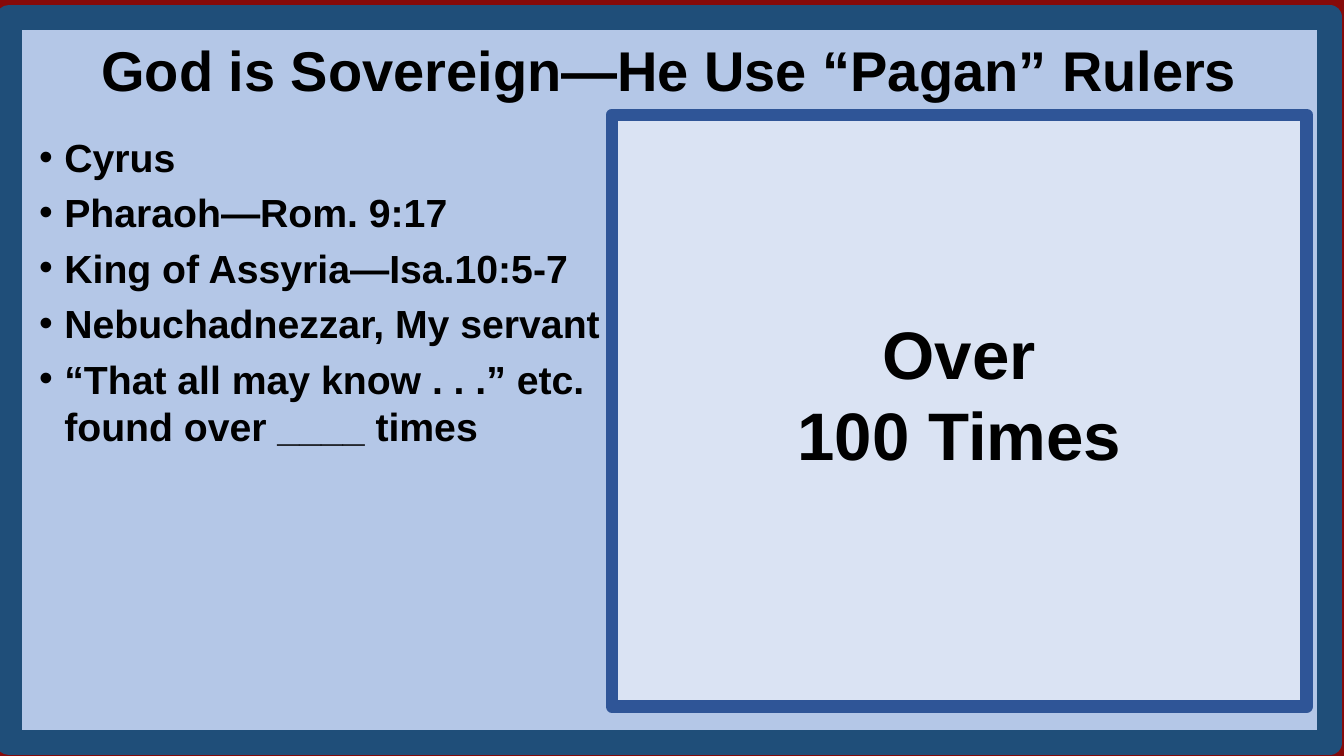
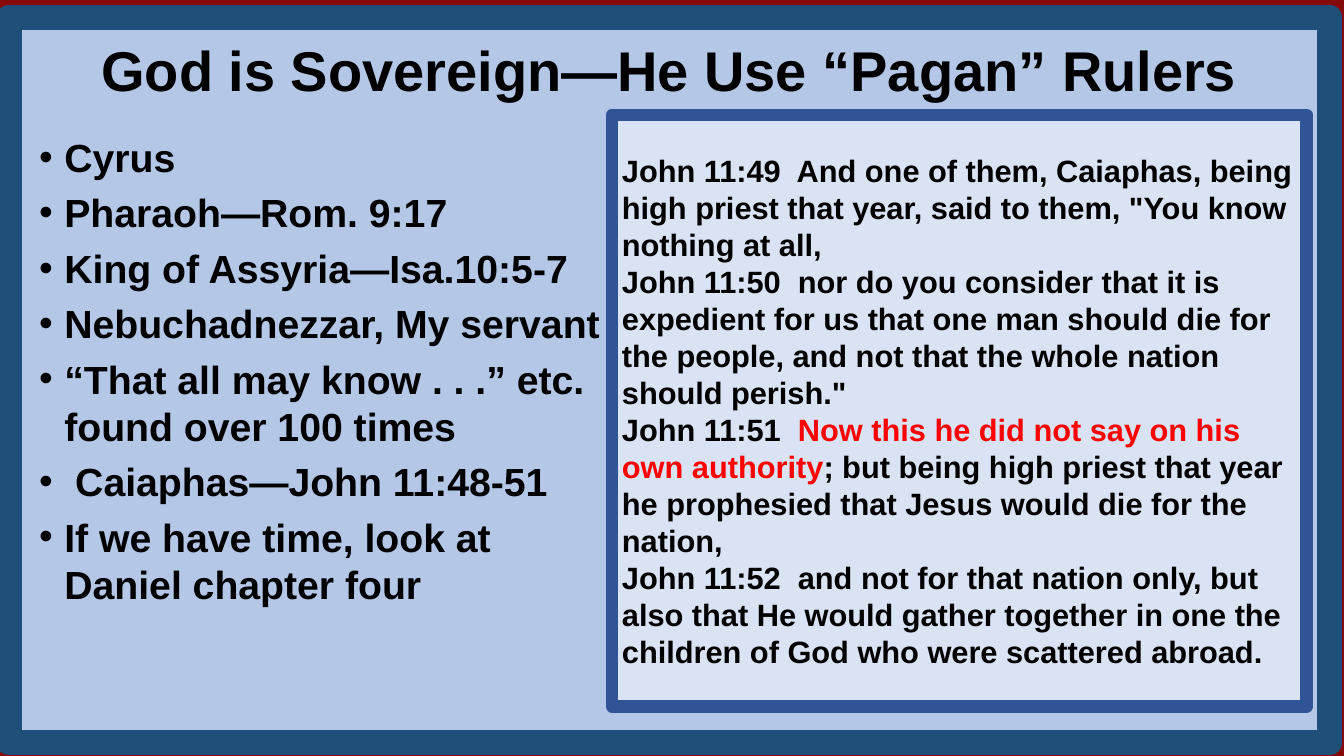
from dataclasses import dataclass

from lxml import etree
from pptx import Presentation
from pptx.dml.color import RGBColor
from pptx.enum.shapes import MSO_SHAPE
from pptx.enum.text import MSO_ANCHOR, MSO_AUTO_SIZE, PP_ALIGN
from pptx.oxml.ns import qn
from pptx.util import Emu, Pt

EMU_PER_PX = 9144  # 100 px to the inch
RECTANGLE = MSO_SHAPE.RECTANGLE
TOP, MIDDLE = MSO_ANCHOR.TOP, MSO_ANCHOR.MIDDLE
LEFT, CENTER = PP_ALIGN.LEFT, PP_ALIGN.CENTER
NO_AUTOFIT = MSO_AUTO_SIZE.NONE
TITLE_ONLY = 5


@dataclass(frozen=True)
class Theme:
    font: str = "Arial"
    backdrop: str = "860A0A"
    frame_fill: str = "B4C7E7"
    frame_line: str = "1F4E79"
    panel_fill: str = "DAE3F3"
    panel_line: str = "2F5597"
    ink: str = "000000"
    accent: str = "FF0000"
    title_size: int = 40
    bullet_size: int = 28
    callout_size: int = 48
    verse_size: int = 22


def px(length):
    return Emu(length * EMU_PER_PX)


class SlideBuilder:
    """Holds the style and the slide being built."""

    def __init__(self, deck, theme):
        self.deck = deck
        self.theme = theme
        self.page = None
        deck.slide_width, deck.slide_height = px(1333), px(750)
        fill = deck.slide_master.background.fill
        fill.solid()
        fill.fore_color.rgb = RGBColor.from_string(theme.backdrop)

    def start(self, title):
        """Add a page with its framed background and title."""
        self.page = self.deck.slides.add_slide(self.deck.slide_layouts[TITLE_ONLY])
        self.rectangle((9, 17, 1310, 720), self.theme.frame_fill,
                       self.theme.frame_line, 18)
        box = self.page.shapes.title
        box.left, box.top, box.width, box.height = map(px, (26, 30, 1275, 77))
        self.page.shapes._spTree.append(box._element)  # above the frame
        frame = box.text_frame
        frame.auto_size = NO_AUTOFIT
        frame.vertical_anchor = TOP
        self.add_paragraphs(frame, [title], self.theme.title_size, CENTER)

    def rectangle(self, place, fill, line, line_width):
        box = self.page.shapes.add_shape(RECTANGLE, *map(px, place))
        box.shadow.inherit = False
        box.fill.solid()
        box.fill.fore_color.rgb = RGBColor.from_string(fill)
        box.line.color.rgb = RGBColor.from_string(line)
        box.line.width = Pt(line_width)
        return box

    def panel(self, paragraphs, size, align, bottom_margin=5):
        """Add the outlined panel on the right."""
        box = self.rectangle((607, 114, 689, 587), self.theme.panel_fill,
                             self.theme.panel_line, 9)
        frame = box.text_frame
        frame.word_wrap = True
        frame.vertical_anchor = MIDDLE
        frame.margin_bottom = px(bottom_margin)
        self.add_paragraphs(frame, paragraphs, size, align)

    def bullets(self, items, height):
        """Add the bulleted list on the left."""
        box = self.page.shapes.add_textbox(*map(px, (29, 127, 608, height)))
        frame = box.text_frame
        frame.word_wrap = True
        self.add_paragraphs(frame, items, self.theme.bullet_size, LEFT)
        for para in frame.paragraphs:
            para.space_after = Pt(6)
            self.add_bullet(para)

    def add_bullet(self, para):
        properties = para._p.get_or_add_pPr()
        properties.set("marL", str(px(25)))
        properties.set("indent", str(px(-25)))
        color = etree.SubElement(properties, qn("a:buClr"))
        etree.SubElement(color, qn("a:srgbClr"), val=self.theme.ink)
        etree.SubElement(properties, qn("a:buFont"), typeface=self.theme.font)
        etree.SubElement(properties, qn("a:buChar"), char="•")

    def add_paragraphs(self, frame, paragraphs, size, align):
        """Fill a frame; a paragraph is a string or a list of (text, color)."""
        for index, content in enumerate(paragraphs):
            para = frame.paragraphs[0] if index == 0 else frame.add_paragraph()
            para.alignment = align
            spans = [(content, self.theme.ink)] if isinstance(content, str) else content
            for text, color in spans:
                for number, line in enumerate(text.split("\n")):
                    if number:
                        para.add_line_break()
                    self.add_span(para, line, size, color)

    def add_span(self, para, text, size, color):
        span = para.add_run()
        span.text = text
        span.font.name = self.theme.font
        span.font.size = Pt(size)
        span.font.bold = True
        span.font.color.rgb = RGBColor.from_string(color)


TITLE = "God is Sovereign—He Use “Pagan” Rulers"


def ruler_points(count):
    return [
        "Cyrus",
        "Pharaoh—Rom. 9:17",
        "King of Assyria—Isa.10:5-7",
        "Nebuchadnezzar, My servant",
        f"“That all may know . . .” etc. found over {count} times",
    ]


def main():
    deck = Presentation()
    theme = Theme()
    builder = SlideBuilder(deck, theme)

    # Slide 1: how often the phrase occurs
    builder.start(TITLE)
    builder.panel(["Over", "100 Times"], theme.callout_size, CENTER, bottom_margin=40)
    builder.bullets(ruler_points("____"), 326)

    # Slide 2: the prophecy of Caiaphas
    verses = [
        "John 11:49  And one of them, Caiaphas, being high priest that year, "
        "said to them, \"You know nothing at all,",
        "John 11:50  nor do you consider that it is expedient for us that one man "
        "should die for the people, and not that the whole nation should perish.\"",
        [
            ("John 11:51  ", theme.ink),
            ("Now this he did not say on his own authority", theme.accent),
            ("; but being high priest that year he prophesied that Jesus would "
             "die for the nation,", theme.ink),
        ],
        "John 11:52  and not for that nation only, but also that He would gather "
        "together in one the children of God who were scattered abroad.",
    ]
    builder.start(TITLE)
    builder.panel(verses, theme.verse_size, LEFT)
    builder.bullets(ruler_points("100") + [
        " Caiaphas—John 11:48-51",
        "If we have time, look at\nDaniel chapter four",
    ], 485)

    deck.save("out.pptx")


if __name__ == "__main__":
    main()
